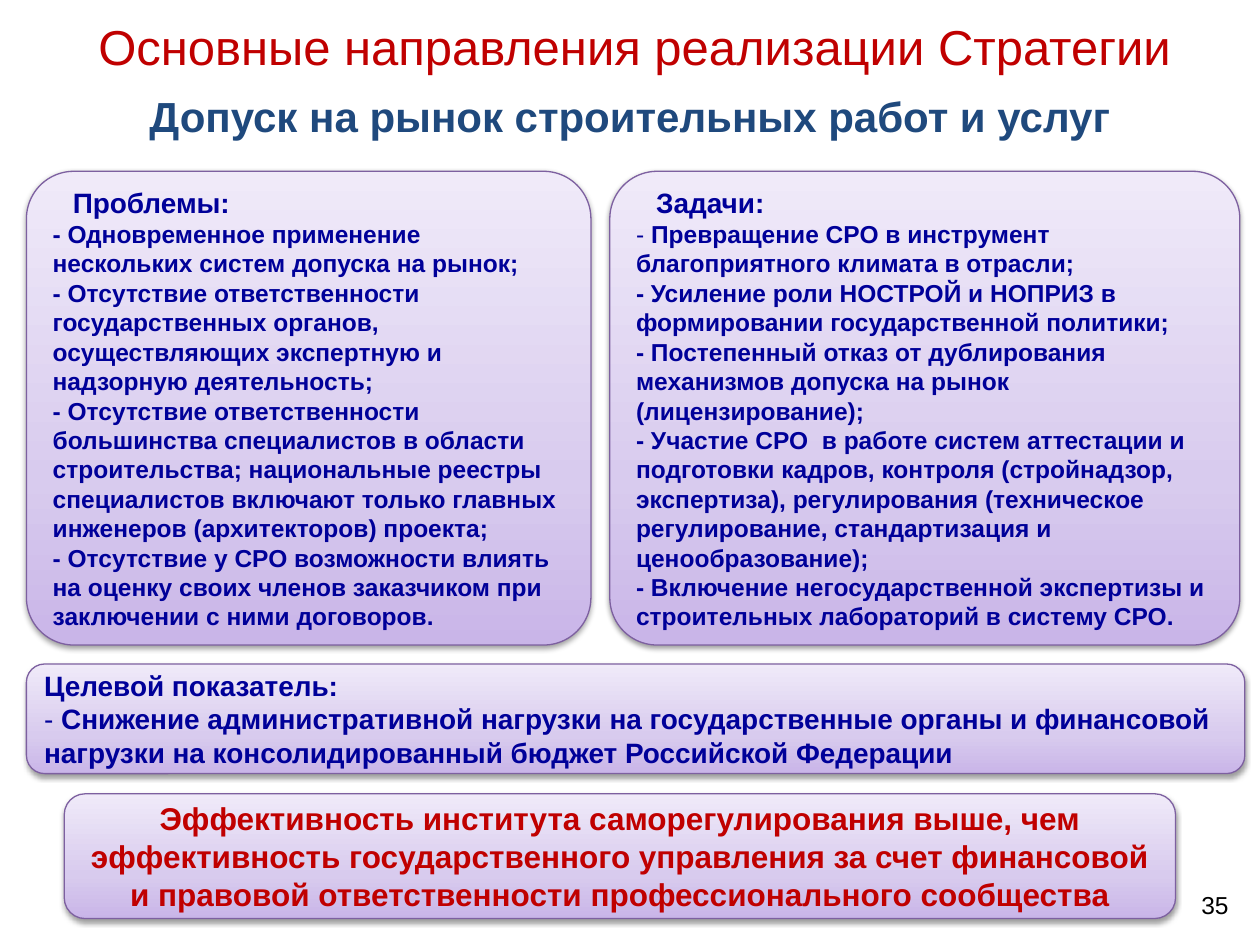
from lxml import etree
from pptx import Presentation
from pptx.dml.color import RGBColor
from pptx.enum.shapes import MSO_SHAPE
from pptx.enum.text import MSO_ANCHOR, PP_ALIGN
from pptx.oxml.ns import qn
from pptx.util import Inches, Pt

ROUND = MSO_SHAPE.ROUNDED_RECTANGLE
MIDDLE = MSO_ANCHOR.MIDDLE
LEFT, CENTER, RIGHT = PP_ALIGN.LEFT, PP_ALIGN.CENTER, PP_ALIGN.RIGHT
RED = RGBColor(0xC0, 0x00, 0x00)
NAVY = RGBColor(0x00, 0x00, 0x99)
BLUE = RGBColor(0x1F, 0x49, 0x7D)
BLACK = RGBColor(0x00, 0x00, 0x00)
PURPLE = RGBColor(0x7D, 0x60, 0xA0)
DEEP = RGBColor(0xC9, 0xB5, 0xE8)
LILAC = RGBColor(0xD8, 0xCB, 0xEE)
PALE = RGBColor(0xF0, 0xEA, 0xF9)
STOPS = ((0, DEEP), (35, LILAC), (100, PALE))

PROBLEMS = (
    "- Одновременное применение нескольких систем допуска на рынок;",
    "- Отсутствие ответственности государственных органов, осуществляющих экспертную и надзорную деятельность;",
    "- Отсутствие ответственности большинства специалистов в области строительства; национальные реестры "
    "специалистов включают только главных инженеров (архитекторов) проекта;",
    "- Отсутствие у СРО возможности влиять на оценку своих членов заказчиком при заключении с ними договоров.",
)
TASKS = (
    "- Превращение СРО в инструмент благоприятного климата в отрасли;",
    "- Усиление роли НОСТРОЙ и НОПРИЗ в формировании государственной политики;",
    "- Постепенный отказ от дублирования механизмов допуска на рынок (лицензирование);",
    "- Участие СРО  в работе систем аттестации и подготовки кадров, контроля (стройнадзор, экспертиза), "
    "регулирования (техническое регулирование, стандартизация и ценообразование);",
    "- Включение негосударственной экспертизы и строительных лабораторий в систему СРО.",
)
TARGET = (
    "- Снижение административной нагрузки на государственные органы и финансовой нагрузки "
    "на консолидированный бюджет Российской Федерации",
)
RESULT = (
    "Эффективность института саморегулирования выше, чем эффективность государственного управления "
    "за счет финансовой и правовой ответственности профессионального сообщества"
)


class Board:
    """Holds the style and the current slide, laid out on a grid of 100 columns and 75 rows."""

    font = "Arial"

    def __init__(self, deck):
        self.slide = deck.slides.add_slide(deck.slide_layouts[6])
        self.col = deck.slide_width / 100
        self.row = deck.slide_height / 75

    def place(self, x, y, w, h):
        return [round(n) for n in (x * self.col, y * self.row, w * self.col, h * self.row)]

    def phrase(self, para, text, size, color, bold=True, align=LEFT, thin=False):
        para.alignment = align
        font = para.font
        font.name, font.size, font.bold = self.font, Pt(size), bold
        font.color.rgb = color
        if thin:
            dash = para.add_run()
            dash.text, text = text[:2], text[2:]
            dash.font.bold = False
        para.add_run().text = text

    def label(self, box, text, size, color, bold=False, align=CENTER):
        frame = self.slide.shapes.add_textbox(*self.place(*box)).text_frame
        frame.word_wrap = True
        frame.vertical_anchor = MIDDLE
        self.phrase(frame.paragraphs[0], text, size, color, bold, align)

    def panel(self, box, curve=None):
        shape = self.slide.shapes.add_shape(ROUND, *self.place(*box))
        if curve:
            shape.adjustments[0] = curve
        shape.line.color.rgb = PURPLE
        shape.line.width = Pt(0.75)
        self.shade(shape)
        self.shadow(shape)
        frame = shape.text_frame
        frame.word_wrap = True
        frame.vertical_anchor = MIDDLE
        return frame

    def shade(self, shape):
        shape.fill.gradient()
        shape.fill.gradient_angle = 90
        stops = shape._element.spPr.find(".//" + qn("a:gsLst"))
        for stop in list(stops):
            stops.remove(stop)
        for share, color in STOPS:
            stop = etree.SubElement(stops, qn("a:gs"), pos=str(share * 1000))
            etree.SubElement(stop, qn("a:srgbClr"), val=str(color))

    def shadow(self, shape):
        shape.shadow.inherit = False
        effects = shape._element.spPr.find(qn("a:effectLst"))
        cast = etree.SubElement(effects, qn("a:outerShdw"), blurRad=str(Pt(3.1)), dist=str(Pt(1.6)),
                                dir="5400000", rotWithShape="0")
        tint = etree.SubElement(cast, qn("a:srgbClr"), val=str(BLACK))
        etree.SubElement(tint, qn("a:alpha"), val="38000")

    def points(self, box, head, lines, size, indent=0, thin=False, curve=None):
        frame = self.panel(box, curve)
        title = frame.paragraphs[0]
        if indent:
            title._p.get_or_add_pPr().set("indent", str(Inches(indent)))
        self.phrase(title, head, 16, NAVY)
        for n, line in enumerate(lines):
            self.phrase(frame.add_paragraph(), line, size, NAVY, thin=thin and n == 0)

    def banner(self, box, text, size, color):
        self.phrase(self.panel(box).paragraphs[0], text, size, color, align=CENTER)


def main():
    deck = Presentation()
    deck.slide_width, deck.slide_height = Inches(10), Inches(7.5)
    board = Board(deck)
    board.label((75.2, 69.8, 23.3, 4), "35", 14, BLACK, align=RIGHT)
    board.points((2.1, 52.7, 96.7, 8.7), "Целевой показатель:", TARGET, 16, thin=True)
    board.points((2.1, 13.6, 44.8, 37.6), "Проблемы:", PROBLEMS, 14, indent=0.16, curve=0.1)
    board.points((48.4, 13.6, 50, 37.6), "Задачи:", TASKS, 14, indent=0.16, thin=True, curve=0.1)
    board.banner((5.1, 63, 88.2, 9.9), RESULT, 18, RED)
    board.label((0.4, 6.3, 99.2, 5.7), "Допуск на рынок строительных работ и услуг", 24, BLUE, bold=True)
    board.label((2.2, 0, 96.3, 7.3), "Основные направления реализации Стратегии", 28, RED)
    deck.save("out.pptx")


if __name__ == "__main__":
    main()
